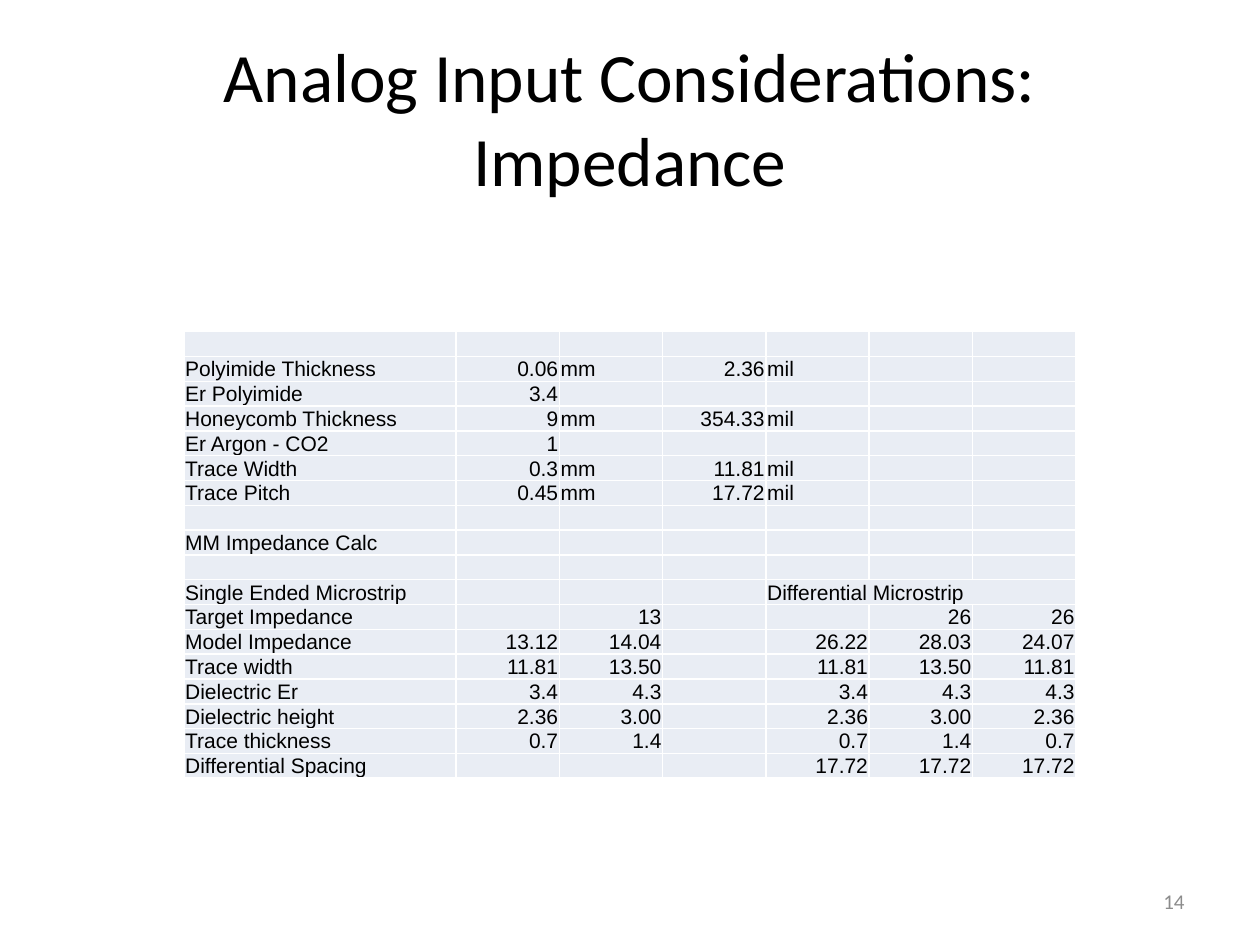
import pptx
import pptx.dml.color
import pptx.enum.text
import pptx.oxml
import pptx.oxml.ns
import pptx.util
from lxml import etree

COLORS = {"ink": "000000", "muted": "8C8C8C", "cell": "E9EDF4", "rule": "FFFFFF"}
ALIGN = pptx.enum.text.PP_ALIGN
ANCHOR = pptx.enum.text.MSO_ANCHOR

LABEL_SHARE, VALUE_SHARE = 0.216, 0.082
ROW_SHARE = 0.024
DIFFERENTIAL_COLUMN = 4

IMPEDANCE_ROWS = [
    [],
    ["Polyimide Thickness", "0.06", "mm", "2.36", "mil"],
    ["Er Polyimide", "3.4"],
    ["Honeycomb Thickness", "9", "mm", "354.33", "mil"],
    ["Er Argon - CO2", "1"],
    ["Trace Width", "0.3", "mm", "11.81", "mil"],
    ["Trace Pitch", "0.45", "mm", "17.72", "mil"],
    [],
    ["MM Impedance Calc"],
    [],
    ["Single Ended Microstrip", "", "", "", "Differential Microstrip"],
    ["Target Impedance", "", "13", "", "", "26", "26"],
    ["Model Impedance", "13.12", "14.04", "", "26.22", "28.03", "24.07"],
    ["Trace width", "11.81", "13.50", "", "11.81", "13.50", "11.81"],
    ["Dielectric Er", "3.4", "4.3", "", "3.4", "4.3", "4.3"],
    ["Dielectric height", "2.36", "3.00", "", "2.36", "3.00", "2.36"],
    ["Trace thickness", "0.7", "1.4", "", "0.7", "1.4", "0.7"],
    ["Differential Spacing", "", "", "", "17.72", "17.72", "17.72"],
]


def rgb(name):
    return pptx.dml.color.RGBColor.from_string(COLORS[name])


def is_number(text):
    return text.replace(".", "").isdigit()


class SlideBuilder:
    """Places elements by shares of the slide's width and height."""

    def __init__(self, deck):
        self.width, self.height = deck.slide_width, deck.slide_height
        self.slide = deck.slides.add_slide(deck.slide_layouts[6])

    def x(self, share):
        return round(self.width * share)

    def y(self, share):
        return round(self.height * share)

    def style_runs(self, paragraph, font, size, color):
        for run in paragraph.runs:
            run.font.name = font
            run.font.size = pptx.util.Pt(size)
            run.font.color.rgb = rgb(color)

    def text(self, words, left, top, width, height, size, align, color="ink"):
        box = self.slide.shapes.add_textbox(
            self.x(left), self.y(top), self.x(width), self.y(height))
        frame = box.text_frame
        frame.word_wrap = True
        frame.vertical_anchor = ANCHOR.MIDDLE
        frame.text = words
        for paragraph in frame.paragraphs:
            paragraph.alignment = align
            self.style_runs(paragraph, "Calibri", size, color)

    def table(self, rows, left, top, column_shares, row_share):
        frame = self.slide.shapes.add_table(
            len(rows), len(column_shares), self.x(left), self.y(top),
            self.x(sum(column_shares)), self.y(row_share * len(rows)))
        grid = frame.table
        grid.first_row = grid.horz_banding = False
        for column, share in zip(grid.columns, column_shares):
            column.width = self.x(share)
        for r, values in enumerate(rows):
            grid.rows[r].height = self.y(row_share)
            padded = values + [""] * (len(column_shares) - len(values))
            for c, value in enumerate(padded):
                self.cell(grid.cell(r, c), value)
        return grid

    def cell(self, cell, value):
        cell.margin_left = cell.margin_right = cell.margin_top = pptx.util.Inches(0.01)
        cell.margin_bottom = 0
        cell.vertical_anchor = ANCHOR.BOTTOM
        self.borders(cell)
        cell.fill.solid()
        cell.fill.fore_color.rgb = rgb("cell")
        cell.text_frame.text = value
        paragraph = cell.text_frame.paragraphs[0]
        paragraph.alignment = ALIGN.RIGHT if is_number(value) else ALIGN.LEFT
        self.style_runs(paragraph, "Arial", 12, "ink")
        if not value:
            # An empty cell takes its line height from the end mark
            end_mark = etree.SubElement(paragraph._p, pptx.oxml.ns.qn("a:endParaRPr"), sz="1200")
            etree.SubElement(end_mark, pptx.oxml.ns.qn("a:latin"), typeface="Arial")

    def borders(self, cell):
        properties = cell._tc.get_or_add_tcPr()
        for side in ("lnL", "lnR", "lnT", "lnB"):
            properties.append(pptx.oxml.parse_xml(
                f'<a:{side} {pptx.oxml.ns.nsdecls("a")} w="{pptx.util.Pt(1)}"><a:solidFill>'
                f'<a:srgbClr val="{COLORS["rule"]}"/></a:solidFill></a:{side}>'))


def main():
    deck = pptx.Presentation()
    deck.slide_width, deck.slide_height = pptx.util.Inches(10), pptx.util.Inches(7.5)
    page = SlideBuilder(deck)
    impedance = page.table(IMPEDANCE_ROWS, 0.146, 0.351,
                           [LABEL_SHARE] + [VALUE_SHARE] * 6, ROW_SHARE)
    heading_row = next(r for r, row in enumerate(IMPEDANCE_ROWS)
                       if "Differential Microstrip" in row)
    impedance.cell(heading_row, DIFFERENTIAL_COLUMN).merge(impedance.cell(heading_row, 6))
    page.text("Analog Input Considerations:\vImpedance",
              0.05, 0.04, 0.9, 0.167, 39.6, ALIGN.CENTER)
    page.text("14", 0.717, 0.927, 0.233, 0.053, 12, ALIGN.RIGHT, "muted")
    deck.save("out.pptx")


if __name__ == "__main__":
    main()
